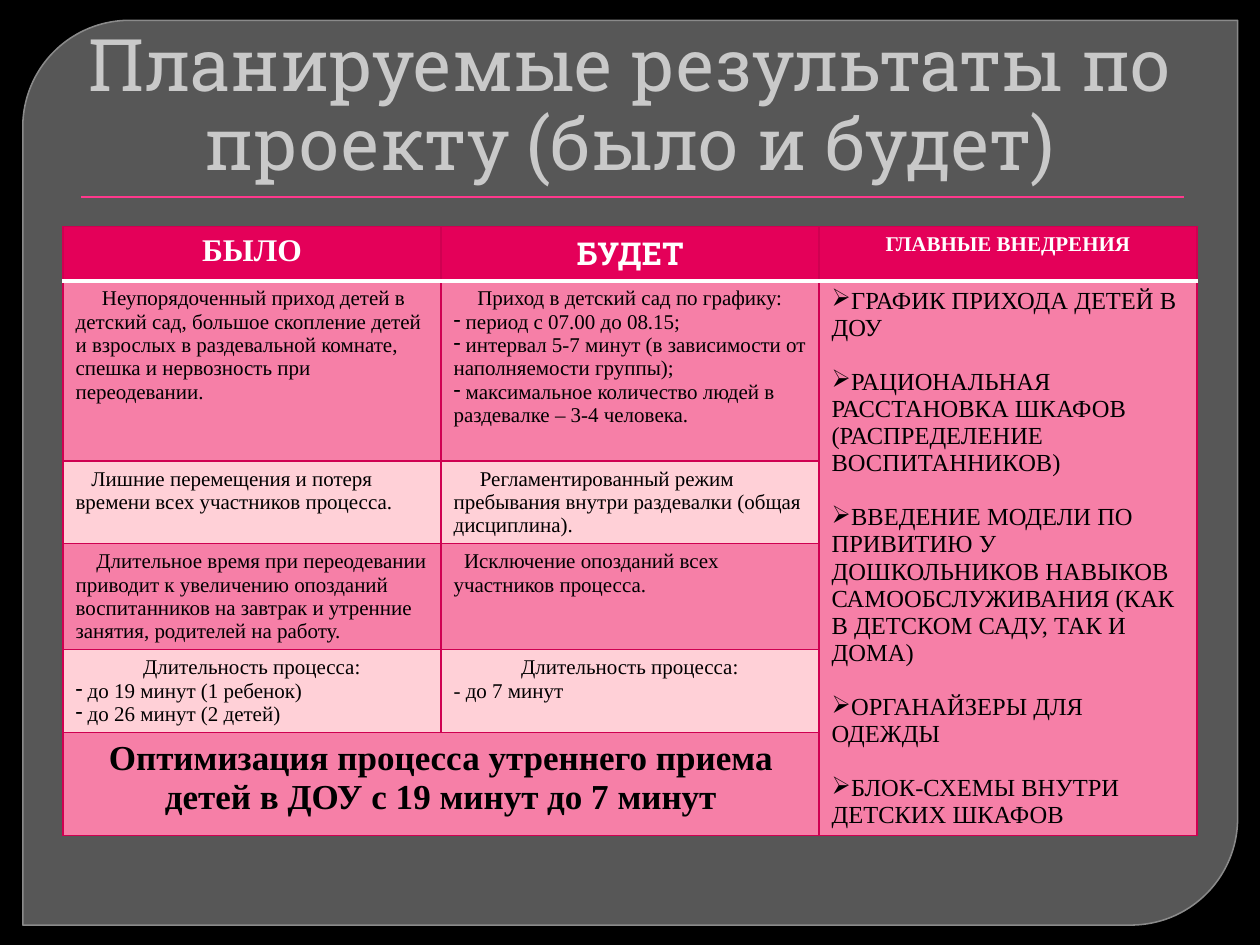
from dataclasses import dataclass

from lxml.etree import SubElement
from pptx import Presentation
from pptx.dml.color import RGBColor
from pptx.enum.shapes import MSO_CONNECTOR as Connector, MSO_SHAPE as Shape
from pptx.enum.text import MSO_ANCHOR as Anchor, MSO_AUTO_SIZE as AutoSize, PP_ALIGN as Align
from pptx.oxml.ns import qn
from pptx.util import Cm, Pt

BLACK = RGBColor(0x00, 0x00, 0x00)
WHITE = RGBColor(0xFF, 0xFF, 0xFF)
PANEL = RGBColor(0x57, 0x57, 0x57)
PANEL_EDGE = RGBColor(0x8A, 0x8A, 0x8A)
TITLE = RGBColor(0xC9, 0xC9, 0xC9)
RULE = RGBColor(0xFF, 0x38, 0x8C)
HEADER = RGBColor(0xE4, 0x00, 0x59)
BAND = RGBColor(0xF6, 0x7F, 0xA7)
PALE = RGBColor(0xFF, 0xD0, 0xD7)
BORDER = RGBColor(0xCF, 0x00, 0x51)
SERIF = "Times New Roman"
SLAB = "Roboto Slab"


@dataclass
class Line:
    text: str
    size: float = 12
    font: str = SERIF
    bold: bool = False
    color: RGBColor = BLACK
    align: Align = Align.LEFT
    indent: float = 0
    bullet: str = ""
    before: float = 0


class Deck:
    def __init__(self):
        self.presentation = Presentation()
        self.presentation.slide_width = Cm(25.4)
        self.presentation.slide_height = Cm(19.05)
        self.slide = self.presentation.slides.add_slide(self.presentation.slide_layouts[5])
        self.slide.background.fill.solid()
        self.slide.background.fill.fore_color.rgb = BLACK

    def panel(self, left, top, width, height):
        panel = self.slide.shapes.add_shape(
            Shape.ROUND_2_DIAG_RECTANGLE, Cm(left), Cm(top), Cm(width), Cm(height))
        panel.adjustments[0] = 0.118
        panel.adjustments[1] = 0
        panel.shadow.inherit = False
        panel.fill.solid()
        panel.fill.fore_color.rgb = PANEL
        panel.line.color.rgb = PANEL_EDGE
        panel.line.width = Pt(0.87)
        self.slide.shapes.title.element.addprevious(panel.element)

    def rule(self, left, top, width):
        rule = self.slide.shapes.add_connector(
            Connector.STRAIGHT, Cm(left), Cm(top), Cm(left + width), Cm(top))
        rule.line.color.rgb = RULE
        rule.line.width = Pt(0.75)
        SubElement(rule.element.spPr, qn("a:effectLst"))

    def title(self, text, left, top, width, height):
        title = self.slide.shapes.title
        title.left, title.top, title.width, title.height = map(Cm, (left, top, width, height))
        title.text_frame.word_wrap = True
        title.text_frame.auto_size = AutoSize.NONE
        title.text_frame.vertical_anchor = Anchor.BOTTOM
        self.set_lines(title.text_frame, [Line(text, 41.4, SLAB, color=TITLE, align=Align.CENTER)])
        title.text_frame.paragraphs[0].line_spacing = 0.91

    def set_lines(self, frame, lines):
        frame.text = "\n".join(line.text for line in lines)
        for paragraph, line in zip(frame.paragraphs, lines):
            paragraph.alignment = line.align
            paragraph.space_before = Pt(line.before)
            properties = paragraph._p.get_or_add_pPr()
            properties.set("marL", "0")
            properties.set("indent", str(Cm(line.indent)))
            if line.bullet:
                SubElement(properties, qn("a:buChar"), char=line.bullet)
            for run in paragraph.runs:
                run.font.size = Pt(line.size)
                run.font.name = line.font
                run.font.bold = line.bold
                run.font.color.rgb = line.color

    def border(self, cell, side, color, width):
        edge = SubElement(cell._tc.get_or_add_tcPr(), qn(f"a:{side}"), w=str(Pt(width)))
        fill = SubElement(edge, qn("a:solidFill"))
        SubElement(fill, qn("a:srgbClr"), val=str(color))

    def table(self, rows, left, top, width, heights, merges):
        columns = len(rows[0])
        table = self.slide.shapes.add_table(
            len(rows), columns, Cm(left), Cm(top), Cm(width), Cm(sum(heights))).table
        for column in table.columns:
            column.width = Cm(width / columns)
        for row, height in zip(table.rows, heights):
            row.height = Cm(height)
        for start, end in merges:
            table.cell(*start).merge(table.cell(*end))
        for r, row in enumerate(rows):
            for c, lines in enumerate(row):
                cell = table.cell(r, c)
                for side in ("lnL", "lnR", "lnT", "lnB"):
                    under_header = (r, side) in ((0, "lnB"), (1, "lnT"))
                    self.border(cell, side, *((WHITE, 3) if under_header else (BORDER, 0.75)))
                cell.fill.solid()
                cell.fill.fore_color.rgb = HEADER if r == 0 else BAND if r % 2 or c == 2 else PALE
                if lines:
                    self.set_lines(cell.text_frame, lines)


def heading(text, size=18, font=SERIF):
    return [Line(text, size, font, True, WHITE, Align.CENTER)]


def dashes(*texts):
    return [Line(f" {text}", bullet="-") for text in texts]


def centered(text):
    return [Line(text, align=Align.CENTER)]


def innovations(*texts):
    return [Line(text, 14, bullet="➢", before=15.5 if i else 0) for i, text in enumerate(texts)]


def main():
    rows = [
        [heading("БЫЛО"), heading("БУДЕТ", font=SLAB), heading("ГЛАВНЫЕ ВНЕДРЕНИЯ", 12)],
        [[Line("Неупорядоченный приход детей в детский сад, большое скопление детей и взрослых "
               "в раздевальной комнате, спешка и нервозность при переодевании.", indent=0.53)],
         centered("Приход в детский сад по графику:")
         + dashes("период с 07.00 до 08.15;",
                  "интервал 5-7 минут (в зависимости от наполняемости группы);",
                  "максимальное количество людей в раздевалке – 3-4 человека."),
         innovations("ГРАФИК ПРИХОДА ДЕТЕЙ В ДОУ",
                     "РАЦИОНАЛЬНАЯ РАССТАНОВКА ШКАФОВ (РАСПРЕДЕЛЕНИЕ ВОСПИТАННИКОВ)",
                     "ВВЕДЕНИЕ МОДЕЛИ ПО ПРИВИТИЮ У ДОШКОЛЬНИКОВ НАВЫКОВ "
                     "САМООБСЛУЖИВАНИЯ (КАК В ДЕТСКОМ САДУ, ТАК И ДОМА)",
                     "ОРГАНАЙЗЕРЫ ДЛЯ ОДЕЖДЫ",
                     "БЛОК-СХЕМЫ ВНУТРИ ДЕТСКИХ ШКАФОВ")],
        [[Line("Лишние перемещения и потеря времени всех участников процесса.", indent=0.32)],
         [Line("Регламентированный режим пребывания внутри раздевалки (общая дисциплина).",
               indent=0.53)], None],
        [[Line("Длительное время при переодевании приводит к увеличению опозданий воспитанников "
               "на завтрак и утренние занятия, родителей на работу.", indent=0.42)],
         [Line("Исключение опозданий всех участников процесса.", indent=0.21)], None],
        [centered("Длительность процесса:")
         + dashes("до 19 минут (1 ребенок)", "до 26 минут (2 детей)"),
         centered("Длительность процесса:") + [Line("- до 7 минут")], None],
        [[Line("Оптимизация процесса утреннего приема детей в ДОУ с 19 минут до 7 минут",
               20, bold=True, align=Align.CENTER)], None, None],
    ]
    deck = Deck()
    deck.panel(0.46, 0.41, 24.49, 18.24)
    deck.title("Планируемые результаты по проекту (было и будет)", 1.27, 0.71, 22.86, 3.18)
    deck.rule(1.63, 3.97, 22.23)
    deck.table(rows, 1.27, 4.57, 22.86, [1.09, 3.63, 1.67, 2.13, 1.67, 2.08],
               [((1, 2), (5, 2)), ((5, 0), (5, 1))])
    deck.presentation.save("out.pptx")


if __name__ == "__main__":
    main()
